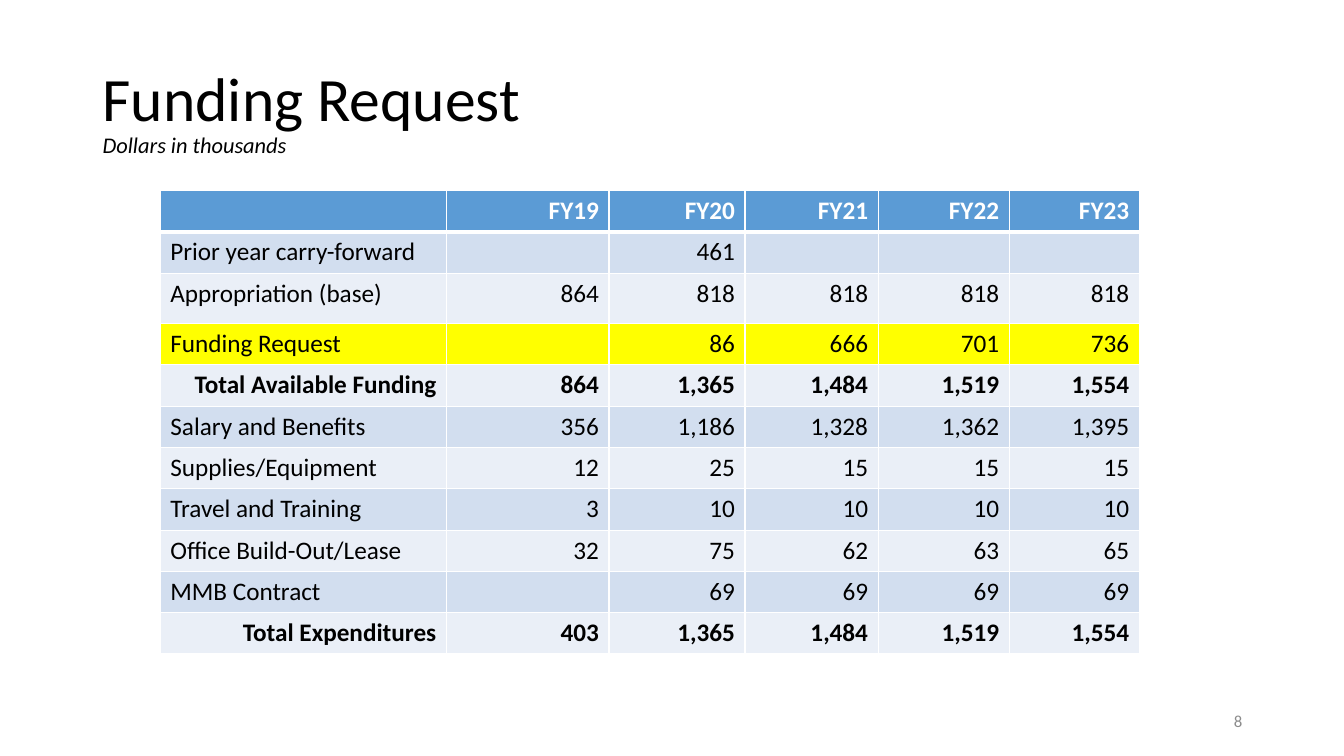
from dataclasses import dataclass

from lxml import etree
from pptx import Presentation
from pptx.dml.color import RGBColor
from pptx.enum.text import MSO_ANCHOR, PP_ALIGN
from pptx.oxml.ns import qn
from pptx.util import Inches, Pt

LEFT, RIGHT = PP_ALIGN.LEFT, PP_ALIGN.RIGHT
MIDDLE = MSO_ANCHOR.MIDDLE
BLANK_LAYOUT = 6


@dataclass(frozen=True)
class Theme:
    font: str = "Calibri"
    text: str = "000000"
    white: str = "FFFFFF"
    muted: str = "8C8C8C"
    header: str = "5B9BD5"
    bands: tuple = ("EAEFF7", "D2DEEF")
    highlight: str = "FFFF00"
    title_size: int = 44
    subtitle_size: int = 16
    table_size: int = 18
    number_size: int = 12
    border: int = 1
    header_border: int = 3


# Table content: each row is a label followed by one value per year
HEADER = ("", "FY19", "FY20", "FY21", "FY22", "FY23")
ROWS = (
    HEADER,
    ("Prior year carry-forward", "", "461", "", "", ""),
    ("Appropriation (base)", "864", "818", "818", "818", "818"),
    ("Funding Request", "", "86", "666", "701", "736"),
    ("Total Available Funding", "864", "1,365", "1,484", "1,519", "1,554"),
    ("Salary and Benefits", "356", "1,186", "1,328", "1,362", "1,395"),
    ("Supplies/Equipment", "12", "25", "15", "15", "15"),
    ("Travel and Training", "3", "10", "10", "10", "10"),
    ("Office Build-Out/Lease", "32", "75", "62", "63", "65"),
    ("MMB Contract", "", "69", "69", "69", "69"),
    ("Total Expenditures", "403", "1,365", "1,484", "1,519", "1,554"),
)
COLUMN_WIDTHS = (2.84, 1.61, 1.35, 1.32, 1.3, 1.29)
ROW_HEIGHT = 0.41
TALL_ROW, TALL_HEIGHT = 2, 0.5
HIGHLIGHT_ROW = 3


class SlideBuilder:
    def __init__(self, slide, theme):
        self.slide = slide
        self.theme = theme

    def add_run(self, paragraph, text, color, **formats):
        run = paragraph.add_run()
        run.text = text
        run.font.color.rgb = RGBColor.from_string(color)
        for name, value in {"name": self.theme.font, **formats}.items():
            setattr(run.font, name, value)

    def add_text_box(self, left, top, width, height, alignment=LEFT):
        box = self.slide.shapes.add_textbox(
            Inches(left), Inches(top), Inches(width), Inches(height))
        frame = box.text_frame
        for name, value in {"word_wrap": True, "vertical_anchor": MIDDLE}.items():
            setattr(frame, name, value)
        paragraph = frame.paragraphs[0]
        paragraph.alignment = alignment
        return paragraph

    def add_title(self, title, subtitle):
        theme = self.theme
        paragraph = self.add_text_box(0.92, 0.4, 11.5, 1.45)
        paragraph.line_spacing = 0.9
        self.add_run(paragraph, title, theme.text, size=Pt(theme.title_size))
        paragraph.add_line_break()
        self.add_run(paragraph, subtitle, theme.text,
                     size=Pt(theme.subtitle_size), italic=True)

    def add_slide_number(self, number):
        paragraph = self.add_text_box(9.42, 6.95, 3, 0.4, RIGHT)
        self.add_run(paragraph, number, self.theme.muted, size=Pt(self.theme.number_size))

    def set_borders(self, cell, row):
        theme = self.theme
        widths = {
            "L": theme.border,
            "R": theme.border,
            "T": theme.header_border if row == 1 else theme.border,
            "B": theme.header_border if row == 0 else theme.border,
        }
        properties = cell._tc.get_or_add_tcPr()
        # Border lines come before the fill in the cell properties
        for position, (side, width) in enumerate(widths.items()):
            line = etree.Element(qn(f"a:ln{side}"), w=str(Pt(width)))
            fill = etree.SubElement(line, qn("a:solidFill"))
            etree.SubElement(fill, qn("a:srgbClr"), val=theme.white)
            properties.insert(position, line)

    def row_fill(self, row):
        if row == 0:
            return self.theme.header
        if row == HIGHLIGHT_ROW:
            return self.theme.highlight
        return self.theme.bands[row % 2]

    def add_table(self, left, top, rows):
        theme = self.theme
        heights = [TALL_HEIGHT if row == TALL_ROW else ROW_HEIGHT
                   for row in range(len(rows))]
        table = self.slide.shapes.add_table(
            len(rows), len(COLUMN_WIDTHS), Inches(left), Inches(top),
            Inches(sum(COLUMN_WIDTHS)), Inches(sum(heights))).table
        for column, width in zip(table.columns, COLUMN_WIDTHS):
            column.width = Inches(width)
        for row, (values, height) in enumerate(zip(rows, heights)):
            table.rows[row].height = Inches(height)
            is_total = values[0].startswith("Total")
            for column, value in enumerate(values):
                cell = table.cell(row, column)
                cell.fill.solid()
                cell.fill.fore_color.rgb = RGBColor.from_string(self.row_fill(row))
                self.set_borders(cell, row)
                paragraph = cell.text_frame.paragraphs[0]
                paragraph.alignment = RIGHT if column or is_total else LEFT
                paragraph.font.size = Pt(theme.table_size)
                if value:
                    self.add_run(paragraph, value, theme.text if row else theme.white,
                                 size=Pt(theme.table_size), bold=row == 0 or is_total)


def main():
    presentation = Presentation()
    presentation.slide_width = Inches(13.33)
    presentation.slide_height = Inches(7.5)
    slide = presentation.slides.add_slide(presentation.slide_layouts[BLANK_LAYOUT])
    builder = SlideBuilder(slide, Theme())

    # Page number, funding table and heading
    builder.add_slide_number("8")
    builder.add_table(1.59, 1.89, ROWS)
    builder.add_title("Funding Request", "Dollars in thousands")

    presentation.save("out.pptx")


if __name__ == "__main__":
    main()
